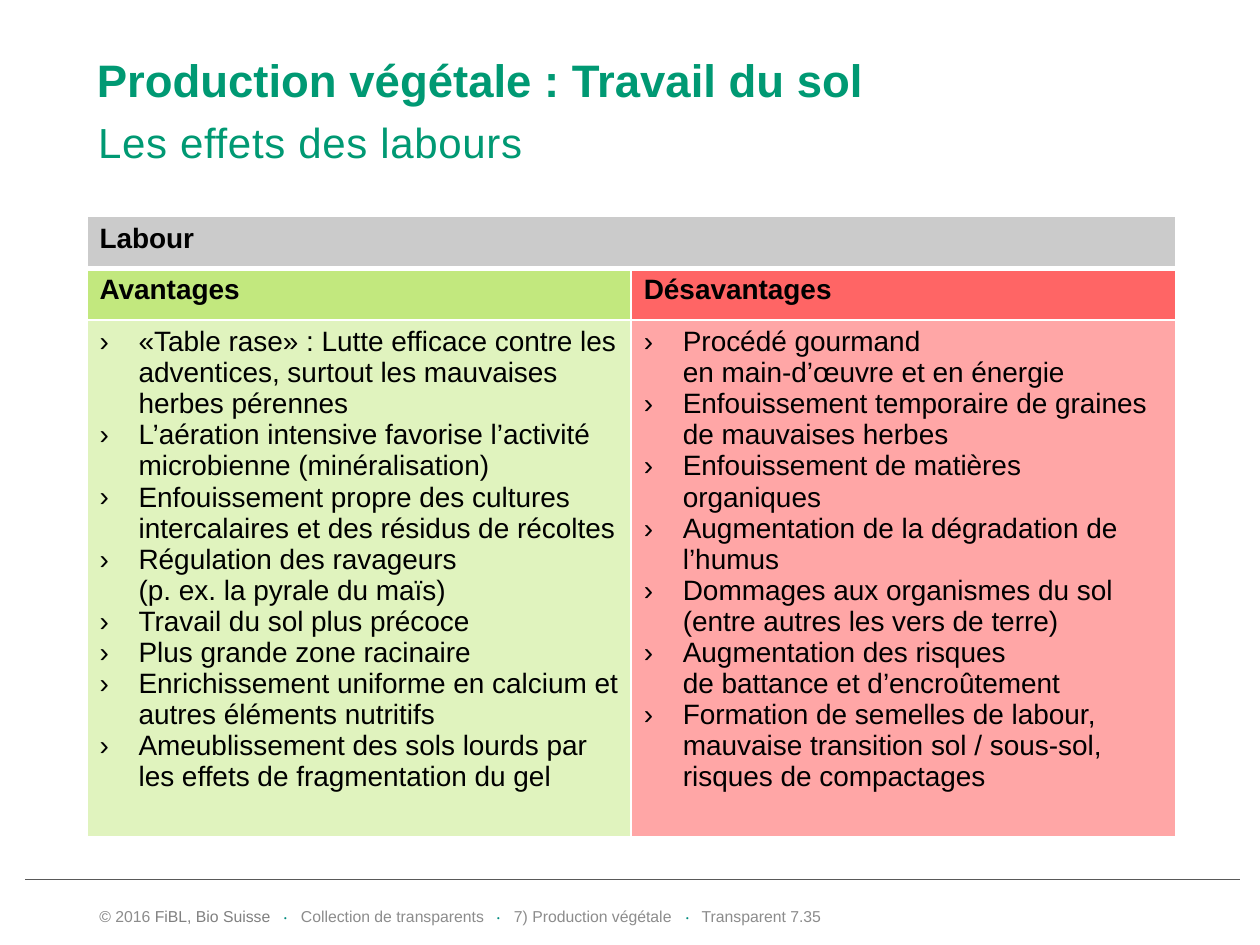
from lxml.etree import SubElement
from pptx import Presentation
from pptx.dml.color import RGBColor
from pptx.enum.shapes import MSO_CONNECTOR
from pptx.enum.text import MSO_ANCHOR
from pptx.oxml.ns import qn
from pptx.util import Inches, Pt

COLORS = {
    "green": "009973", "teal": "008C7F", "rule": "595959",
    "gray": "808080", "light_gray": "8C8C8C", "black": "000000",
    "white": "FFFFFF", "header": "CBCBCB",
    "pro_head": "C2E87E", "pro_body": "D6EFA9",
    "con_head": "FF6565", "con_body": "FF0000",
}
ADVANTAGES = [
    "«Table rase» : Lutte efficace contre les adventices, surtout les mauvaises herbes pérennes",
    "L’aération intensive favorise l’activité microbienne (minéralisation)",
    "Enfouissement propre des cultures intercalaires et des résidus de récoltes",
    "Régulation des ravageurs \n(p. ex. la pyrale du maïs)",
    "Travail du sol plus précoce",
    "Plus grande zone racinaire",
    "Enrichissement uniforme en calcium et autres éléments nutritifs",
    "Ameublissement des sols lourds par les effets de fragmentation du gel",
]
DISADVANTAGES = [
    "Procédé gourmand \nen main-d’œuvre et en énergie",
    "Enfouissement temporaire de graines de mauvaises herbes",
    "Enfouissement de matières organiques",
    "Augmentation de la dégradation de l’humus",
    "Dommages aux organismes du sol (entre autres les vers de terre)",
    "Augmentation des risques \nde battance et d’encroûtement",
    "Formation de semelles de labour, mauvaise transition sol / sous-sol, risques de compactages",
]
FOOTER_SECTIONS = ["Collection de transparents", "7) Production végétale", "Transparent 7.35"]
FOOTER_TABS = [1.46, 1.6, 3.15, 3.29, 4.65, 4.78]


def rgb(name):
    return RGBColor.from_string(COLORS[name])


def add_run(paragraph, text, size, color, bold=False, font="Arial"):
    run = paragraph.add_run()
    run.text = text
    run.font.name = font
    run.font.size = Pt(size)
    run.font.bold = bold
    run.font.color.rgb = rgb(color)
    return run


def add_text_box(slide, left, top, width, height, anchor=MSO_ANCHOR.TOP):
    """Return the first paragraph of a new wrapping text box."""
    frame = slide.shapes.add_textbox(
        Inches(left), Inches(top), Inches(width), Inches(height)).text_frame
    frame.word_wrap = True
    frame.vertical_anchor = anchor
    return frame.paragraphs[0]


def add_heading(slide, left, top, width):
    title = add_text_box(slide, left, top, width, 0.52, MSO_ANCHOR.MIDDLE)
    title.line_spacing = 0.9
    add_run(title, "Production végétale : Travail du sol", 26, "green", bold=True)
    subtitle = add_text_box(slide, left + 0.01, top + 0.52, width, 0.49)
    subtitle.line_spacing = 0.9
    run = add_run(subtitle, "Les effets des labours", 24, "green")
    run.font._element.set("spc", "40")


def style_cell(cell, color, opacity=100, bottom_width=1):
    properties = cell._tc.get_or_add_tcPr()
    widths = {"a:lnL": 1, "a:lnR": 1, "a:lnT": 1, "a:lnB": bottom_width}
    for tag, width in widths.items():
        border = SubElement(properties, qn(tag), w=str(Pt(width)))
        fill = SubElement(border, qn("a:solidFill"))
        SubElement(fill, qn("a:srgbClr"), val=COLORS["white"])
    cell.fill.solid()
    cell.fill.fore_color.rgb = rgb(color)
    if opacity < 100:
        color_element = properties.find(qn("a:solidFill")).find(qn("a:srgbClr"))
        SubElement(color_element, qn("a:alpha"), val=str(opacity * 1000))


def fill_heading_cell(cell, text, color, bottom_width=1):
    style_cell(cell, color, bottom_width=bottom_width)
    add_run(cell.text_frame.paragraphs[0], text, 16, "black", bold=True)


def fill_bullet_cell(cell, items, color, opacity):
    style_cell(cell, color, opacity)
    frame = cell.text_frame
    for index, item in enumerate(items):
        paragraph = frame.add_paragraph() if index else frame.paragraphs[0]
        properties = paragraph._p.get_or_add_pPr()
        properties.set("marL", str(Inches(0.31)))
        properties.set("indent", str(-Inches(0.31)))
        SubElement(properties, qn("a:buFont"), typeface="Arial")
        SubElement(properties, qn("a:buChar"), char="›")
        for number, line in enumerate(item.split("\n")):
            if number:
                paragraph.add_line_break()
            add_run(paragraph, line, 16, "black")


def add_effects_table(slide, left, top, width):
    row_heights = [0.41, 0.41, 3.79]
    table = slide.shapes.add_table(
        3, 2, Inches(left), Inches(top), Inches(width), Inches(sum(row_heights))).table
    table.first_row = table.horz_banding = False
    for row, height in zip(table.rows, row_heights):
        row.height = Inches(height)
    for column in table.columns:
        column.width = Inches(width / 2)

    table.cell(0, 0).merge(table.cell(0, 1))
    fill_heading_cell(table.cell(0, 0), "Labour", "header", bottom_width=3)
    style_cell(table.cell(0, 1), "header", bottom_width=3)
    sides = [
        ("Avantages", "pro_head", ADVANTAGES, "pro_body", 75),
        ("Désavantages", "con_head", DISADVANTAGES, "con_body", 35),
    ]
    for column, (heading, head_color, items, body_color, opacity) in enumerate(sides):
        fill_heading_cell(table.cell(1, column), heading, head_color)
        fill_bullet_cell(table.cell(2, column), items, body_color, opacity)


def add_footer(slide, left, top, width):
    rule = slide.shapes.add_connector(
        MSO_CONNECTOR.STRAIGHT, Inches(0.2), Inches(top - 0.06), Inches(9.84), Inches(top - 0.06))
    rule.line.color.rgb = rgb("rule")
    rule.line.width = Pt(0.5)
    SubElement(rule._element.spPr, qn("a:effectLst"))

    paragraph = add_text_box(slide, left, top, width, 0.46, MSO_ANCHOR.MIDDLE)
    tabs = SubElement(paragraph._p.get_or_add_pPr(), qn("a:tabLst"))
    for position in FOOTER_TABS:
        SubElement(tabs, qn("a:tab"), pos=str(Inches(position)), algn="l")
    add_run(paragraph, "© ", 9, "gray")
    add_run(paragraph, "2016 ", 9, "light_gray")
    add_run(paragraph, "FiBL, Bio Suisse", 9, "gray")
    for section in FOOTER_SECTIONS:
        add_run(paragraph, "\t", 9, "teal")
        add_run(paragraph, "•", 8, "teal", font="Montserrat")
        add_run(paragraph, "\t", 9, "teal")
        add_run(paragraph, section, 9, "light_gray")


def main():
    presentation = Presentation()
    presentation.slide_width = Inches(10)
    presentation.slide_height = Inches(7.5)
    slide = presentation.slides.add_slide(presentation.slide_layouts[6])
    add_heading(slide, 0.67, 0.4, 8.64)
    add_effects_table(slide, 0.69, 1.72, 8.64)
    add_footer(slide, 0.69, 7.04, 6.91)
    presentation.save("out.pptx")


if __name__ == "__main__":
    main()
